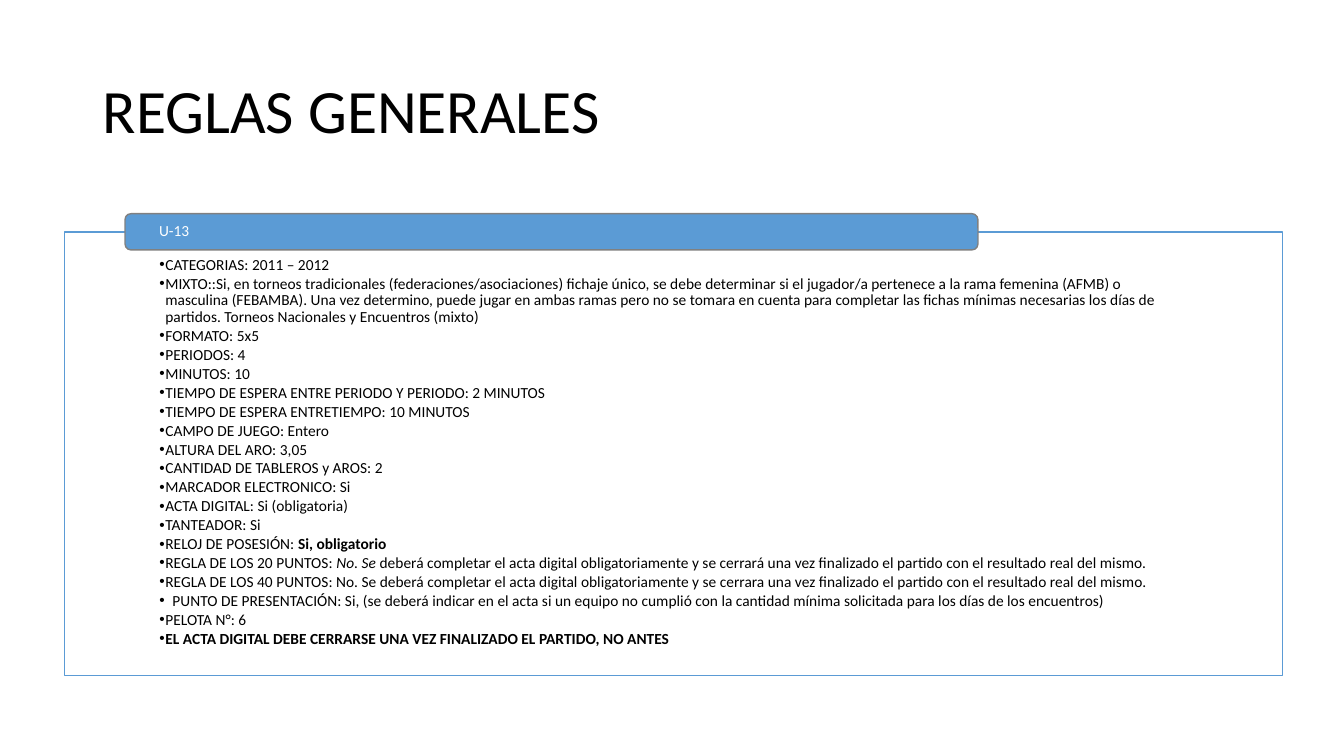
from lxml.etree import SubElement
from pptx import Presentation
from pptx.dml.color import RGBColor
from pptx.enum.shapes import MSO_SHAPE as Shape
from pptx.enum.text import MSO_ANCHOR as Anchor, MSO_AUTO_SIZE as AutoSize, PP_ALIGN as Align
from pptx.oxml.ns import qn
from pptx.util import Inches, Pt

BLACK = RGBColor(0x00, 0x00, 0x00)
WHITE = RGBColor(0xFF, 0xFF, 0xFF)
BLUE = RGBColor(0x5B, 0x9B, 0xD5)
GRAY = RGBColor(0x80, 0x80, 0x80)

PLAIN, BOLD, ITALIC = {}, {"bold": True}, {"italic": True}
BULLET_INDENT = 0.06
WIDE_INDENT = 0.13

RULES = [
    "CATEGORIAS: 2011 – 2012",
    "MIXTO::Si, en torneos tradicionales (federaciones/asociaciones) fichaje único, "
    "se debe determinar si el jugador/a pertenece a la rama femenina (AFMB) o masculina "
    "(FEBAMBA). Una vez determino, puede jugar en ambas ramas pero no se tomara en cuenta "
    "para completar las fichas mínimas necesarias los días de partidos. "
    "Torneos Nacionales y Encuentros (mixto)",
    "FORMATO: 5x5",
    "PERIODOS: 4",
    "MINUTOS: 10",
    "TIEMPO DE ESPERA ENTRE PERIODO Y PERIODO: 2 MINUTOS",
    "TIEMPO DE ESPERA ENTRETIEMPO: 10 MINUTOS",
    "CAMPO DE JUEGO: Entero",
    "ALTURA DEL ARO: 3,05",
    "CANTIDAD DE TABLEROS y AROS: 2",
    "MARCADOR ELECTRONICO: Si",
    "ACTA DIGITAL: Si (obligatoria)",
    "TANTEADOR: Si",
    [("RELOJ DE POSESIÓN: ", PLAIN), ("Si, obligatorio", BOLD)],
    [("REGLA DE LOS 20 PUNTOS: ", PLAIN), ("No. Se ", ITALIC),
     ("deberá completar el acta digital obligatoriamente y se cerrará una vez "
      "finalizado el partido con el resultado real del mismo.", PLAIN)],
    "REGLA DE LOS 40 PUNTOS: No. Se deberá completar el acta digital obligatoriamente "
    "y se cerrara una vez finalizado el partido con el resultado real del mismo.",
    "PUNTO DE PRESENTACIÓN: Si, (se deberá indicar en el acta si un equipo no cumplió "
    "con la cantidad mínima solicitada para los días de los encuentros)",
    "PELOTA N°: 6",
    [("EL ACTA DIGITAL DEBE CERRARSE UNA VEZ FINALIZADO EL PARTIDO, NO ANTES", BOLD)],
]


def apply_format(target, values):
    for name, value in values.items():
        setattr(target, name, value)


def place(shape, left, top, width, height):
    apply_format(shape, {"left": Inches(left), "top": Inches(top),
                         "width": Inches(width), "height": Inches(height)})


def format_frame(frame, anchor, left, top, right, bottom):
    apply_format(frame, {
        "word_wrap": True, "auto_size": AutoSize.NONE, "vertical_anchor": anchor,
        "margin_left": Inches(left), "margin_top": Inches(top),
        "margin_right": Inches(right), "margin_bottom": Inches(bottom)})


def paint(shape, fill, outline):
    shape.fill.solid()
    shape.fill.fore_color.rgb = fill
    shape.line.color.rgb = outline
    shape.line.width = Pt(1)


def write(paragraph, parts, size, color, space_after=0):
    apply_format(paragraph, {"alignment": Align.LEFT, "line_spacing": 0.9,
                             "space_before": Pt(0), "space_after": Pt(space_after)})
    for text, emphasis in parts:
        run = paragraph.add_run()
        run.text = text
        apply_format(run.font, {"name": "Calibri", "size": Pt(size), **emphasis})
        run.font.color.rgb = color


def add_bullet(paragraph, indent):
    properties = paragraph._p.get_or_add_pPr()
    properties.set("marL", str(Inches(indent)))
    properties.set("indent", str(-Inches(indent)))
    SubElement(properties, qn("a:buFont"), typeface="Arial")
    SubElement(properties, qn("a:buChar"), char="•")


def fill_title(title):
    place(title, 0.92, 0.4, 11.5, 1.45)
    format_frame(title.text_frame, Anchor.MIDDLE, 0.1, 0.05, 0.1, 0.05)
    write(title.text_frame.paragraphs[0], [("REGLAS GENERALES", PLAIN)], 44, BLACK)


def fill_rules(body):
    place(body, 0.64, 2.3, 12.08, 4.4)
    paint(body, WHITE, BLUE)
    frame = body.text_frame
    format_frame(frame, Anchor.TOP, 0.94, 0.25, 0.94, 0.09)
    for index, rule in enumerate(RULES):
        paragraph = frame.add_paragraph() if index else frame.paragraphs[0]
        paragraph.level = 1
        parts = [(rule, PLAIN)] if isinstance(rule, str) else rule
        write(paragraph, parts, 11, BLACK, 1.65)
        is_presentation = parts[0][0].startswith("PUNTO DE PRESENTACIÓN")
        add_bullet(paragraph, WIDE_INDENT if is_presentation else BULLET_INDENT)


def add_category(slide, name):
    category = slide.shapes.add_shape(
        Shape.ROUNDED_RECTANGLE, Inches(1.24), Inches(2.12), Inches(8.46), Inches(0.36))
    category.shadow.inherit = False
    paint(category, BLUE, GRAY)
    format_frame(category.text_frame, Anchor.MIDDLE, 0.32, 0, 0.32, 0)
    write(category.text_frame.paragraphs[0], [(name, PLAIN)], 11, WHITE)


def main():
    deck = Presentation()
    apply_format(deck, {"slide_width": Inches(13.33), "slide_height": Inches(7.5)})
    slide = deck.slides.add_slide(deck.slide_layouts[1])
    fill_title(slide.shapes.title)
    fill_rules(slide.placeholders[1])
    add_category(slide, "U-13")
    deck.save("out.pptx")


if __name__ == "__main__":
    main()
